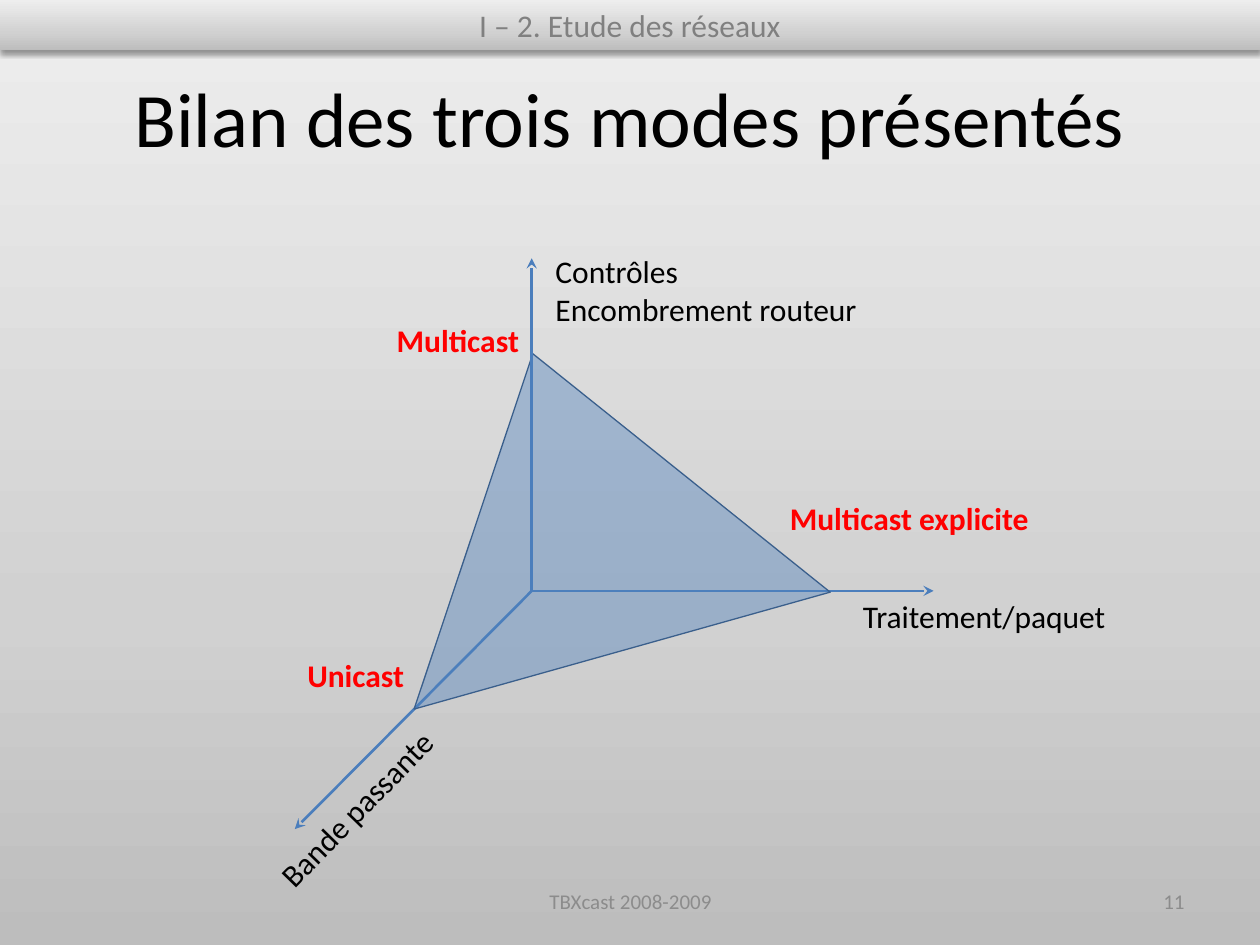
from copy import deepcopy

from lxml import etree
from pptx import Presentation
from pptx import util as u
from pptx.dml.color import RGBColor
from pptx.enum import shapes, text
from pptx.oxml.ns import qn

GREYS = [(0, "BDBDBD"), (0.35, "D1D1D1"), (1, "EEEEEE")]
BLACK, RED, BLUE, GREY = "000000", "FF0000", "4B7EBC", "8C8C8C"
LEFT, CENTER, RIGHT = text.PP_ALIGN.LEFT, text.PP_ALIGN.CENTER, text.PP_ALIGN.RIGHT
TOP, MIDDLE = text.MSO_ANCHOR.TOP, text.MSO_ANCHOR.MIDDLE


def rgb(value):
    """Return a colour from a hex string."""
    return RGBColor.from_string(value)


def inches(*values):
    """Return lengths for several numbers of inches."""
    return [u.Inches(value) for value in values]


def grey_gradient(fill, element):
    """Give a fill the vertical grey gradient, light at the top."""
    fill.gradient()
    fill.gradient_angle = 90
    stops = next(element.iter(qn("a:gsLst")))
    stops.append(deepcopy(stops[0]))
    for stop, (position, color) in zip(fill.gradient_stops, GREYS):
        stop.color.rgb = rgb(color)
        stop.position = position


def write(sp, content, size, color, align=LEFT, anchor=TOP, bold=False):
    """Set and format the text of a shape."""
    tf = sp.text_frame
    tf.text = content
    tf.word_wrap = True
    tf.vertical_anchor = anchor
    for p in tf.paragraphs:
        p.alignment = align
        for r in p.runs:
            r.font.name = "Calibri"
            r.font.size = u.Pt(size)
            r.font.bold = bold
            r.font.color.rgb = rgb(color)


def add_label(s, box, content, size=18, color=BLACK, rotation=0, **style):
    """Add a text box."""
    sp = s.shapes.add_textbox(*inches(*box))
    sp.rotation = rotation
    write(sp, content, size, color, **style)


def add_axis(s, start, end):
    """Add an axis with an arrowhead at its end."""
    line = s.shapes.add_connector(
        shapes.MSO_CONNECTOR.STRAIGHT, *inches(*start, *end))
    line.line.color.rgb = rgb(BLUE)
    line.line.width = u.Pt(1.5)
    etree.SubElement(line.line._get_or_add_ln(), qn("a:tailEnd"), type="stealth")
    etree.SubElement(line._element.spPr, qn("a:effectLst"))


def add_triangle(s, box):
    """Add the translucent triangle that joins the three modes."""
    sp = s.shapes.add_shape(shapes.MSO_SHAPE.ISOSCELES_TRIANGLE, *inches(*box))
    sp.shadow.inherit = False
    sp.adjustments[0] = 0.487
    sp.rotation = 344.3
    sp.fill.solid()
    sp.fill.fore_color.rgb = rgb("4F81BD")
    color = next(sp._element.spPr.iter(qn("a:srgbClr")))
    etree.SubElement(color, qn("a:alpha"), val="42000")
    sp.line.color.rgb = rgb("3A5F8C")
    sp.line.width = u.Pt(0.75)


def add_diagram(s, box):
    """Add the three axes, the triangle and their labels."""
    x, y, w, h = box
    origin = (x + 2.32, y + 2.74)
    add_axis(s, origin, (x + 0.44, y + h))
    add_axis(s, origin, (x + w, origin[1]))
    add_triangle(s, (x + 0.99, y + 0.8, 3.43, 2.46))
    add_axis(s, origin, (origin[0], y + 0.1))
    add_label(s, (x + 2.41, y, 2.7, 0.71), "Contrôles\nEncombrement routeur")
    add_label(s, (x + 4.85, origin[1], 2.58, 0.49), "Traitement/paquet")
    add_label(s, (x, y + 4.11, 2.2, 0.49), "Bande passante", rotation=314.3)
    modes = [
        ("Multicast", 1.15, 0.55, 1.25),
        ("Unicast", 0.44, 3.21, 1.05),
        ("Multicast explicite", 4.27, 1.96, 2.2),
    ]
    for name, dx, dy, width in modes:
        add_label(s, (x + dx, y + dy, width, 0.4), name, color=RED, bold=True)


def add_band(s, box):
    """Add the section band with its soft shadow."""
    sp = s.shapes.add_shape(shapes.MSO_SHAPE.RECTANGLE, *inches(*box))
    sp.line.fill.background()
    grey_gradient(sp.fill, sp._element)
    effects = etree.SubElement(sp._element.spPr, qn("a:effectLst"))
    shadow = etree.SubElement(
        effects, qn("a:outerShdw"), blurRad=str(u.Pt(3.1)),
        dist=str(u.Pt(1.6)), dir="5400000", rotWithShape="0")
    color = etree.SubElement(shadow, qn("a:srgbClr"), val=BLACK)
    etree.SubElement(color, qn("a:alpha"), val="38000")
    write(sp, "I – 2. Etude des réseaux", 18, "808080", CENTER, MIDDLE)


def add_footer(s, box):
    """Add the footer text and the page number."""
    x, y, w, h = box
    add_label(s, (x, y, 3.17, h), "TBXcast 2008-2009", 12, GREY,
              align=CENTER, anchor=MIDDLE)
    add_label(s, (x + w - 2.33, y, 2.33, h), "11", 12, GREY,
              align=RIGHT, anchor=MIDDLE)


def main():
    """Build and save the slide."""
    prs = Presentation()
    prs.slide_width, prs.slide_height = inches(10, 7.5)
    s = prs.slides.add_slide(prs.slide_layouts[6])
    grey_gradient(s.background.fill, s.element)
    add_label(s, (0.5, 0.3, 9, 1.25), "Bilan des trois modes présentés", 44,
              align=CENTER, anchor=MIDDLE)
    add_footer(s, (3.42, 6.95, 6.08, 0.4))
    add_diagram(s, (1.9, 1.95, 5.51, 4.63))
    add_band(s, (0, 0, 10, 0.4))
    prs.save("out.pptx")


if __name__ == "__main__":
    main()
